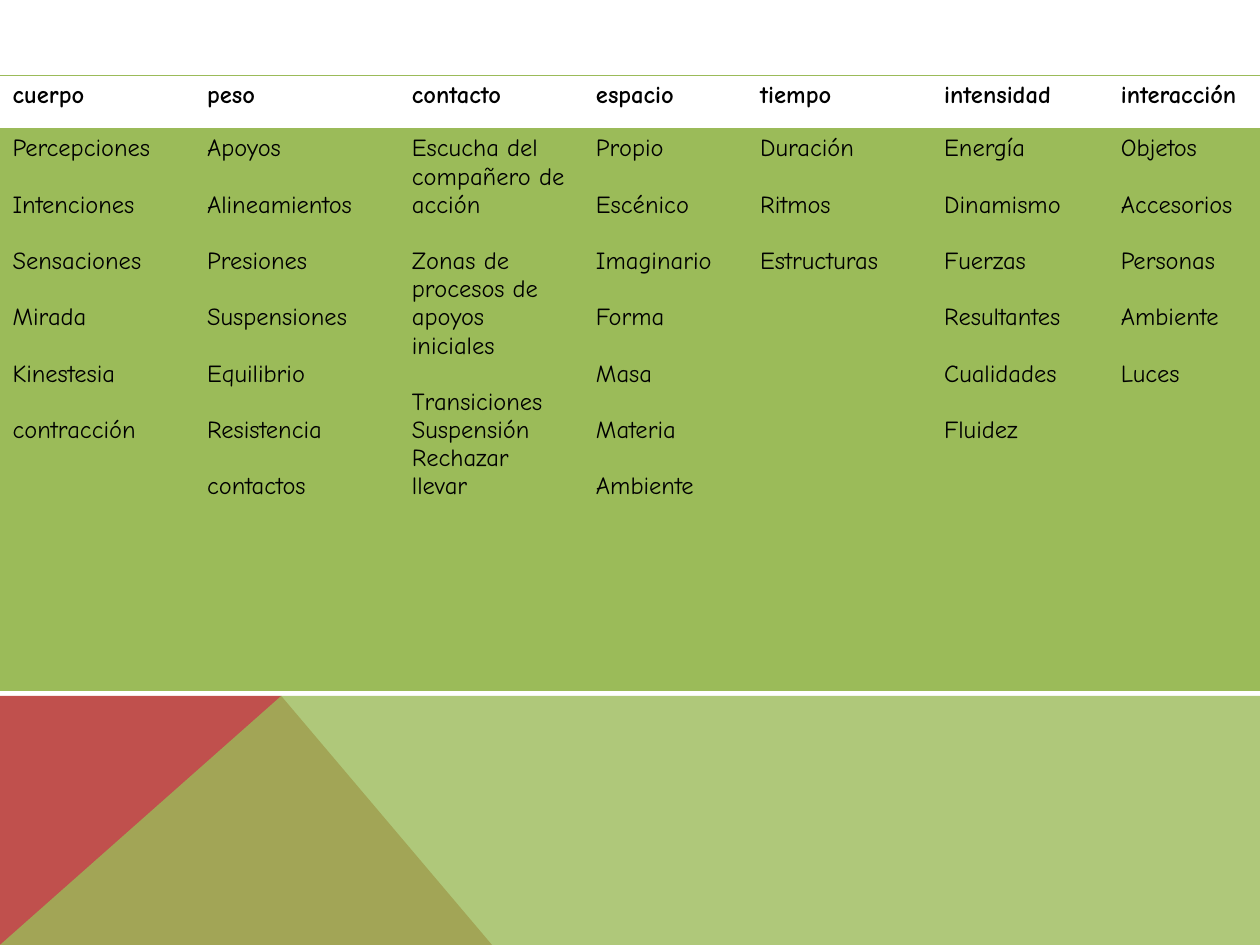
from lxml import etree
from pptx import Presentation
from pptx import util as u
from pptx.dml.color import RGBColor
from pptx.oxml import ns

COLORS = {"green": "9BBB59", "red": "C0504D", "black": "000000"}
PLAIN_TABLE = "{2D5ABB26-0587-4C30-8999-92F81FD0307C}"
WIDTH, HEIGHT = 25.4, 19.05
LINE_PT = 16.1

# Heading, column width in cm, groups of entries (one paragraph per line)
COLUMNS = [
    ("cuerpo", 3.92, ["Percepciones", "Intenciones", "Sensaciones", "Mirada",
                      "Kinestesia", "contracción"]),
    ("peso", 4.13, ["Apoyos", "Alineamientos", "Presiones", "Suspensiones",
                    "Equilibrio", "Resistencia", "contactos"]),
    ("contacto", 3.71, ["Escucha del compañero de acción",
                        "Zonas de procesos de apoyos iniciales",
                        "Transiciones\nSuspensión\nRechazar\nllevar"]),
    ("espacio", 3.31, ["Propio", "Escénico", "Imaginario", "Forma", "Masa",
                       "Materia", "Ambiente"]),
    ("tiempo", 3.71, ["Duración", "Ritmos", "Estructuras"]),
    ("intensidad", 3.56, ["Energía", "Dinamismo", "Fuerzas", "Resultantes",
                          "Cualidades", "Fluidez"]),
    ("interacción", 3.46, ["Objetos", "Accesorios", "Personas", "Ambiente",
                           "Luces"]),
]


def write(p, content, font="Comic Neue", size=14, color="black", bold=False,
          before=0):
    p.space_before = u.Pt(before)
    r = p.add_run()
    r.text = content
    r.font.name, r.font.size, r.font.bold = font, u.Pt(size), bold
    r.font.color.rgb = RGBColor.from_string(COLORS[color])


class SlideBuilder:
    def __init__(self, slide):
        self.s = slide

    def paint(self, fill, color, opacity=100):
        fill.solid()
        fill.fore_color.rgb = RGBColor.from_string(COLORS[color])
        if opacity < 100:
            clr = fill._xPr.find(".//" + ns.qn("a:srgbClr"))
            etree.SubElement(clr, ns.qn("a:alpha"), val=str(opacity * 1000))

    def polygon(self, points, color, opacity=100):
        pts = [(u.Cm(x), u.Cm(y)) for x, y in points]
        fb = self.s.shapes.build_freeform(*pts[0])
        fb.add_line_segments(pts[1:], close=True)
        sp = fb.convert_to_shape()
        sp.shadow.inherit = False
        sp.line.fill.background()
        self.paint(sp.fill, color, opacity)

    def border(self, cell, side, color="green", width=1):
        ln = etree.SubElement(cell._tc.get_or_add_tcPr(), ns.qn("a:" + side),
                              w=str(u.Pt(width)))
        fill = etree.SubElement(ln, ns.qn("a:solidFill"))
        etree.SubElement(fill, ns.qn("a:srgbClr"), val=COLORS[color])

    def table(self, columns, left, top, row_heights):
        width = sum(c[1] for c in columns)
        frame = self.s.shapes.add_table(
            len(row_heights), len(columns), u.Cm(left), u.Cm(top),
            u.Cm(width), u.Cm(sum(row_heights)))
        tbl = frame.table
        tbl.horz_banding = False
        tbl._tbl.tblPr.find(ns.qn("a:tableStyleId")).text = PLAIN_TABLE
        for row, height in zip(tbl.rows, row_heights):
            row.height = u.Cm(height)
        for i, (heading, col_width, groups) in enumerate(columns):
            tbl.columns[i].width = u.Cm(col_width)
            head, body = tbl.cell(0, i), tbl.cell(1, i)
            self.border(head, "lnT")
            self.border(head, "lnB")
            head.fill.background()
            write(head.text_frame.paragraphs[0], heading, bold=True)
            self.border(body, "lnT")
            self.border(body, "lnB")
            self.paint(body.fill, "green", 20)
            self.entries(body.text_frame, groups)

    def entries(self, tf, groups):
        p = tf.paragraphs[0]
        for g, group in enumerate(groups):
            for n, entry in enumerate(group.split("\n")):
                if g or n:
                    p = tf.add_paragraph()
                write(p, entry, before=LINE_PT if g and not n else 0)


def main():
    prs = Presentation()
    prs.slide_width, prs.slide_height = u.Cm(WIDTH), u.Cm(HEIGHT)
    b = SlideBuilder(prs.slides.add_slide(prs.slide_layouts[6]))

    # Coloured base with a shared peak
    edge, peak = 14.03, 5.67
    b.polygon([(0, HEIGHT), (0, edge), (peak, edge), (9.92, HEIGHT)], "red")
    b.polygon([(0, HEIGHT), (peak, edge), (WIDTH, edge), (WIDTH, HEIGHT)],
              "green", opacity=80)

    # Table of movement elements
    b.table(COLUMNS, left=0, top=1.52, row_heights=[1.07, 11.33])
    prs.save("out.pptx")


if __name__ == "__main__":
    main()
